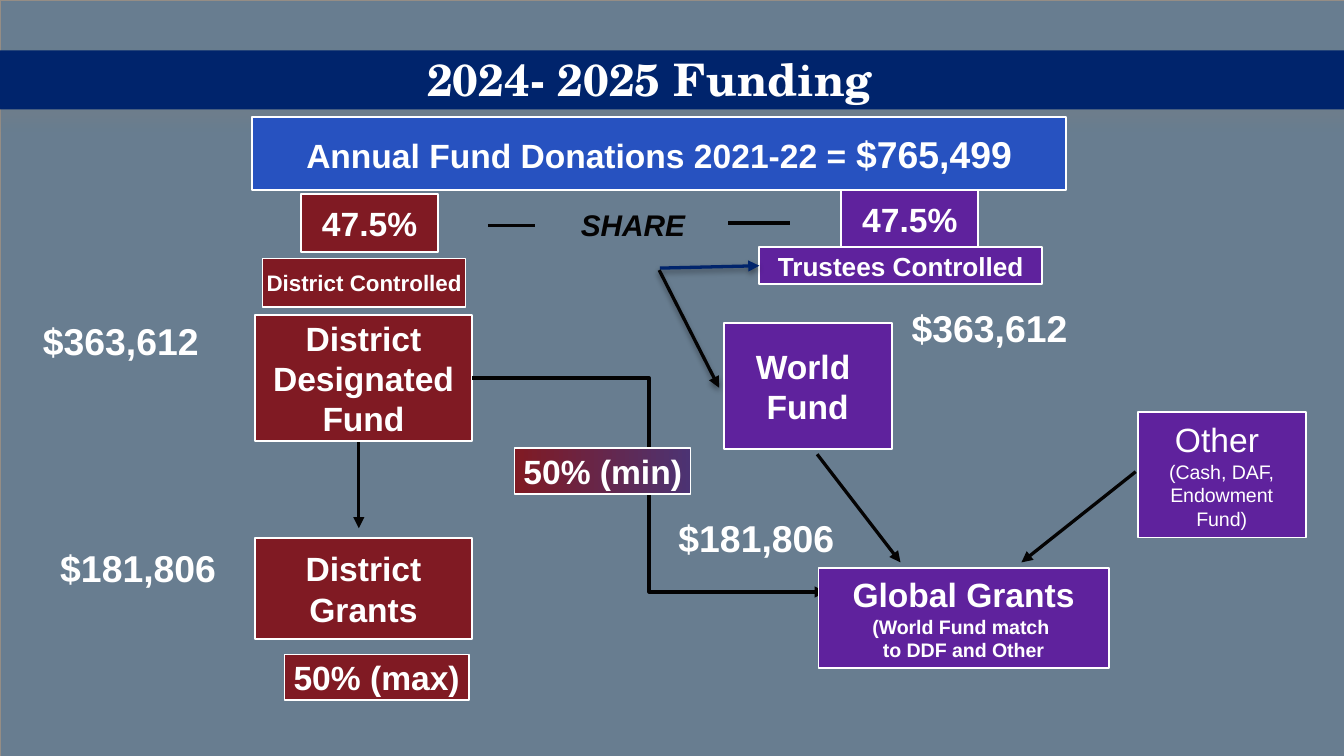
from pptx import Presentation
from pptx.dml.color import RGBColor
from pptx.enum.shapes import MSO_CONNECTOR, MSO_SHAPE
from pptx.enum.text import MSO_ANCHOR, MSO_AUTO_SIZE, PP_ALIGN
from pptx.oxml.ns import qn
from pptx.util import Emu, Pt
from lxml import etree

RECT = MSO_SHAPE.RECTANGLE
STRAIGHT, ELBOW = MSO_CONNECTOR.STRAIGHT, MSO_CONNECTOR.ELBOW
MIDDLE, TOP = MSO_ANCHOR.MIDDLE, MSO_ANCHOR.TOP
LEFT, CENTER = PP_ALIGN.LEFT, PP_ALIGN.CENTER
GROW = MSO_AUTO_SIZE.SHAPE_TO_FIT_TEXT

PX = 4572
SLIDE_SIZE = (2000, 1125)
SLATE, NAVY, BLUE = "687D90", "00246C", "2752C0"
RED, PURPLE, PLUM = "801A23", "5F229D", "4C3373"
WHITE, BLACK, TAUPE = "FFFFFF", "040303", "958D85"
SANS, SERIF = "Arial", "TeX Gyre Schola"
BAND_SHADOW = ("808080", 25, 7, 4.8)
ARROW_SHADOW = ("000000", 38, 3.1, 1.6)
HEAD, TAIL = "headEnd", "tailEnd"

BACK_BOXES = {
    "donations": ((375, 174, 1212, 109), BLUE, 1, True,
                  [("Annual Fund Donations 2021-22 = ", 18, True), ("$765,499", 20, True)]),
    "district grants": ((379, 801, 324, 150), RED, 1, True, [("District Grants", 18, True)]),
    "max": ((423, 974, 275, 68), RED, 0.75, False, [("50% (max)", 18, True)]),
    "designated fund": ((379, 469, 324, 187), RED, 1, True,
                        [("District Designated Fund", 18, True)]),
    "district share": ((448, 289, 204, 86), RED, 1, True, [("47.5%", 18, True)]),
    "trustees share": ((1252, 283, 204, 86), PURPLE, 1, True, [("47.5%", 18, True)]),
    "world fund": ((1077, 481, 250, 187), PURPLE, 1, True, [("World \nFund", 18, True)]),
    "other": ((1693, 613, 250, 187), PURPLE, 1, True,
              [("Other \n", 18, False), ("(Cash, DAF, Endowment Fund)", 10.5, False)]),
    "district": ((391, 385, 302, 72), RED, 0.75, False, [("District Controlled", 12, True)]),
    "trustees": ((1130, 368, 421, 55), PURPLE, 1, True, [("Trustees Controlled", 14, True)]),
}
FRONT_BOXES = {
    "min": ((766, 667, 262, 68), (RED, PLUM), 0.75, False, [("50% (min)", 18, True)]),
    "global grants": ((1218, 845, 432, 149), PURPLE, 1, True,
                      [("Global Grants\n", 18, True),
                       ("(World Fund match \nto DDF and Other", 10.5, True)]),
}
BACK_LINKS = [
    (STRAIGHT, (726, 336, 796, 336), BLACK, None, None, None, None),
    (STRAIGHT, (1084, 332, 1176, 332), BLACK, None, None, None, None),
    (STRAIGHT, (534, 586, 534, 786), BLACK, TAIL, None, None, None),
]
FRONT_LINKS = [
    (ELBOW, (703, 562, 1229, 881), BLACK, TAIL, None, "designated fund", None),
    (STRAIGHT, (1216, 676, 1340, 837), BLACK, TAIL, None, None, None),
    (STRAIGHT, (1690, 702, 1520, 837), BLACK, TAIL, None, None, None),
    (STRAIGHT, (982, 399, 1130, 396), NAVY, TAIL, ARROW_SHADOW, None, "trustees"),
    (STRAIGHT, (1070, 577, 981, 402), BLACK, HEAD, ARROW_SHADOW, None, None),
]
LABELS = [
    ("SHARE", (809, 298, 266, 74), 16, SANS, BLACK, True, CENTER, True),
    ("2024- 2025 Funding", (616, 67, 936, 101), 24, SERIF, WHITE, False, LEFT, True),
    ("$363,612", (44, 463, 304, 87), 20, SANS, WHITE, False, LEFT, True),
    ("$181,806", (70, 801, 274, 87), 20, SANS, WHITE, False, LEFT, False),
    ("$363,612", (1337, 444, 274, 87), 20, SANS, WHITE, False, LEFT, False),
    ("$181,806", (990, 757, 274, 87), 20, SANS, WHITE, False, LEFT, False),
]


def px(values):
    return [Emu(value * PX) for value in values]


def rgb(code):
    return RGBColor.from_string(code)


def add_shadow(effects, color, alpha, blur, distance):
    shadow = etree.SubElement(effects, qn("a:outerShdw"), blurRad=str(Pt(blur)),
                              dist=str(Pt(distance)), dir="5400000",
                              algn="ctr", rotWithShape="0")
    tint = etree.SubElement(shadow, qn("a:srgbClr"), val=color)
    etree.SubElement(tint, qn("a:alpha"), val=str(alpha * 1000))


def add_rect(slide, frame, fill, border, weight):
    rect = slide.shapes.add_shape(RECT, *px(frame))
    rect.shadow.inherit = False
    if isinstance(fill, tuple):
        rect.fill.gradient()
        rect.fill.gradient_angle = 0
        for stop, color, position in zip(rect.fill.gradient_stops, fill, (0, 1)):
            stop.color.rgb = rgb(color)
            stop.position = position
    elif fill:
        rect.fill.solid()
        rect.fill.fore_color.rgb = rgb(fill)
    else:
        rect.fill.background()
    if border:
        rect.line.color.rgb = rgb(border)
        rect.line.width = Pt(weight)
    else:
        rect.line.fill.background()
    return rect


def write(frame, runs, align, anchor, wrap, font_name=SANS, color=WHITE, italic=False):
    frame.word_wrap = wrap
    frame.vertical_anchor = anchor
    paragraph = frame.paragraphs[0]
    paragraph.alignment = align
    for words, size, bold in runs:
        for index, part in enumerate(words.split("\n")):
            if index:
                paragraph.add_line_break()
            if not part:
                continue
            run = paragraph.add_run()
            run.text = part
            run.font.name = font_name
            run.font.size = Pt(size)
            run.font.bold = bold
            run.font.italic = italic
            run.font.color.rgb = rgb(color)


def add_boxes(slide, boxes):
    placed = {}
    for name, (frame, fill, weight, wrap, runs) in boxes.items():
        placed[name] = add_rect(slide, frame, fill, WHITE, weight)
        write(placed[name].text_frame, runs, CENTER, MIDDLE, wrap)
    return placed


def add_links(slide, links, placed):
    for kind, points, color, arrow, shadow, source, target in links:
        link = slide.shapes.add_connector(kind, *px(points))
        if source:
            link.begin_connect(placed[source], 3)
        if target:
            link.end_connect(placed[target], 1)
        link.line.color.rgb = rgb(color)
        link.line.width = Pt(1.75)
        properties = link._element.spPr
        if arrow:
            etree.SubElement(properties.find(qn("a:ln")), qn("a:" + arrow), type="triangle")
        effects = etree.SubElement(properties, qn("a:effectLst"))
        if shadow:
            add_shadow(effects, *shadow)


def main():
    deck = Presentation()
    deck.slide_width, deck.slide_height = px(SLIDE_SIZE)
    slide = deck.slides.add_slide(deck.slide_layouts[6])
    slide.background.fill.solid()
    slide.background.fill.fore_color.rgb = rgb(SLATE)

    add_rect(slide, (0, 0, *SLIDE_SIZE), None, TAUPE, 0.13)
    band = add_rect(slide, (-16, 75, 2034, 88), NAVY, None, 0)
    add_shadow(band._element.spPr.find(qn("a:effectLst")), *BAND_SHADOW)

    add_links(slide, BACK_LINKS, {})
    placed = add_boxes(slide, BACK_BOXES)
    add_links(slide, FRONT_LINKS, placed)
    add_boxes(slide, FRONT_BOXES)

    for words, frame, size, font_name, color, italic, align, wrap in LABELS:
        label = slide.shapes.add_textbox(*px(frame)).text_frame
        write(label, [(words, size, True)], align, TOP, wrap, font_name, color, italic)
        label.auto_size = GROW

    deck.save("out.pptx")


if __name__ == "__main__":
    main()
